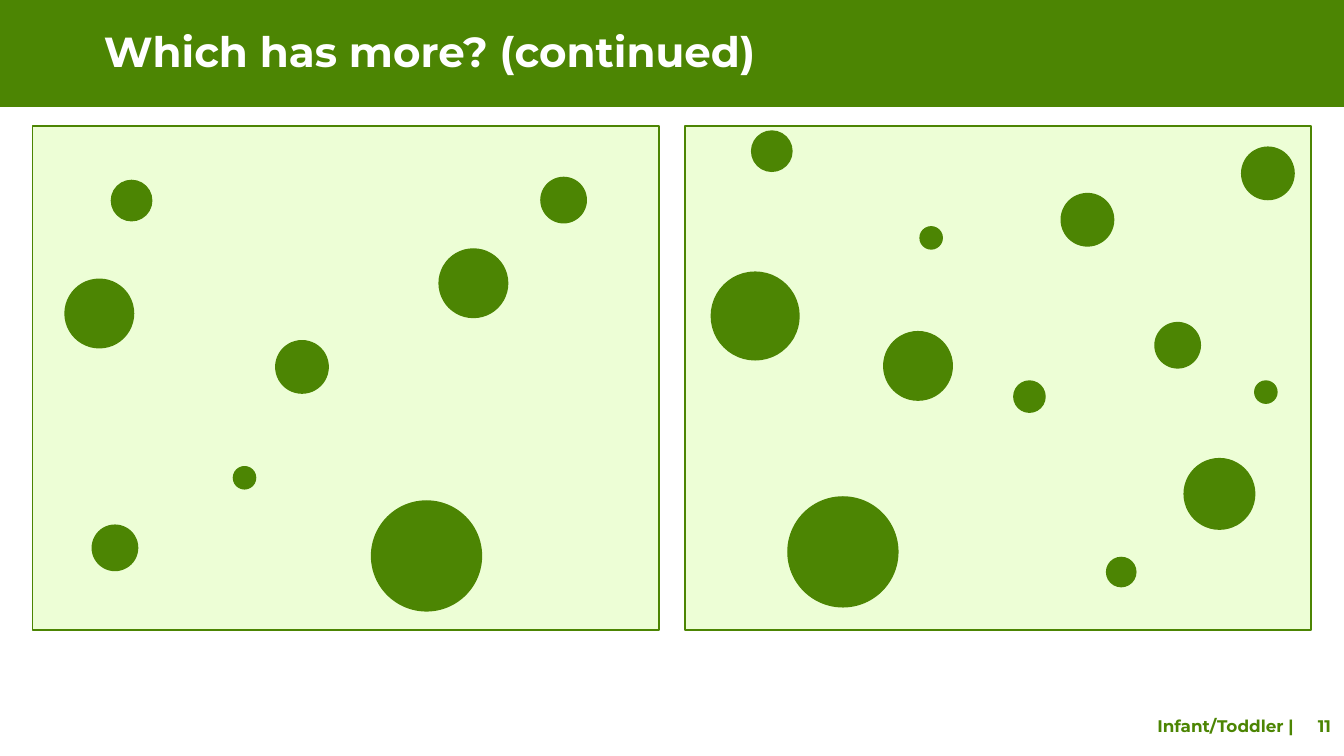
import pptx
import pptx.dml.color
import pptx.enum.shapes
import pptx.enum.text
import pptx.util

SLIDE_WIDTH, SLIDE_HEIGHT = 13.33, 7.5
GREEN, PALE_GREEN, WHITE = "4C8503", "EDFED6", "FFFFFF"
FONT = "Montserrat"

# Two equal panels, centred on the slide
PANEL_WIDTH, PANEL_HEIGHT, PANEL_TOP, PANEL_GAP = 6.21, 5, 1.25, 0.26
PANEL_MARGIN = (SLIDE_WIDTH - 2 * PANEL_WIDTH - PANEL_GAP) / 2

# Dots of each panel: left and top within the panel, diameter
FEWER_DOTS = [
    (0.78, 0.54, 0.4), (1.99, 3.38, 0.22), (2.41, 2.13, 0.52),
    (4.03, 1.22, 0.68), (0.32, 1.52, 0.68), (3.36, 3.72, 1.09),
    (5.04, 0.51, 0.45), (0.59, 3.96, 0.45),
]
MORE_DOTS = [
    (0.66, 0.05, 0.4), (5.65, 2.53, 0.22), (1.97, 2.04, 0.68),
    (4.95, 3.3, 0.7), (1.02, 3.68, 1.09), (3.73, 0.67, 0.52),
    (5.52, 0.21, 0.52), (4.66, 1.95, 0.45), (2.33, 1, 0.22),
    (4.18, 4.28, 0.29), (0.26, 1.45, 0.87), (3.26, 2.53, 0.31),
]


def color(hex_string):
    return pptx.dml.color.RGBColor.from_string(hex_string)


def inches(*lengths):
    return [pptx.util.Inches(length) for length in lengths]


def add_figure(shapes, kind, box, fill, line=None):
    shape = shapes.add_shape(kind, *inches(*box))
    shape.shadow.inherit = False
    shape.fill.solid()
    shape.fill.fore_color.rgb = color(fill)
    if line:
        shape.line.color.rgb = color(line)
        shape.line.width = pptx.util.Pt(1)
    else:
        shape.line.fill.background()
    return shape


def write_text(shape, text, size, text_color, alignment):
    frame = shape.text_frame
    frame.word_wrap = True
    frame.auto_size = pptx.enum.text.MSO_AUTO_SIZE.NONE
    frame.vertical_anchor = pptx.enum.text.MSO_ANCHOR.MIDDLE
    paragraph = frame.paragraphs[0]
    paragraph.alignment = alignment
    run = paragraph.add_run()
    run.text = text
    run.font.name = FONT
    run.font.size = pptx.util.Pt(size)
    run.font.bold = True
    run.font.color.rgb = color(text_color)
    return paragraph


def add_title(slide, text):
    title = slide.shapes.title
    title.left, title.top, title.width, title.height = inches(0.93, 0.26, 11.85, 0.56)
    paragraph = write_text(title, text, 30, WHITE, pptx.enum.text.PP_ALIGN.LEFT)
    paragraph.line_spacing = 0.9


def add_footer(slide, text, left, right):
    box = slide.shapes.add_textbox(*inches(left, 7, right - left, 0.4))
    write_text(box, text, 12, GREEN, pptx.enum.text.PP_ALIGN.RIGHT)


def add_dot_panel(slide, column, dots):
    kinds = pptx.enum.shapes.MSO_SHAPE
    left = PANEL_MARGIN + column * (PANEL_WIDTH + PANEL_GAP)
    group = slide.shapes.add_group_shape()
    panel_box = (left, PANEL_TOP, PANEL_WIDTH, PANEL_HEIGHT)
    add_figure(group.shapes, kinds.RECTANGLE, panel_box, PALE_GREEN, GREEN)
    for x, y, diameter in dots:
        dot_box = (left + x, PANEL_TOP + y, diameter, diameter)
        add_figure(group.shapes, kinds.OVAL, dot_box, GREEN, GREEN)


def main():
    presentation = pptx.Presentation()
    presentation.slide_width, presentation.slide_height = inches(SLIDE_WIDTH, SLIDE_HEIGHT)
    slide = presentation.slides.add_slide(presentation.slide_layouts[5])

    # Header band, placed behind the title
    band = add_figure(slide.shapes, pptx.enum.shapes.MSO_SHAPE.RECTANGLE,
                      (0, 0, SLIDE_WIDTH, 1.06), GREEN)
    slide.shapes.title.element.addprevious(band.element)
    add_title(slide, "Which has more? (continued)")

    # Panels to compare
    add_dot_panel(slide, 1, MORE_DOTS)
    add_dot_panel(slide, 0, FEWER_DOTS)

    # Footer label and page number
    add_footer(slide, "Infant/Toddler |", 9.49, 12.93)
    add_footer(slide, "11", 12.8, 13.3)

    presentation.save("out.pptx")


if __name__ == "__main__":
    main()
